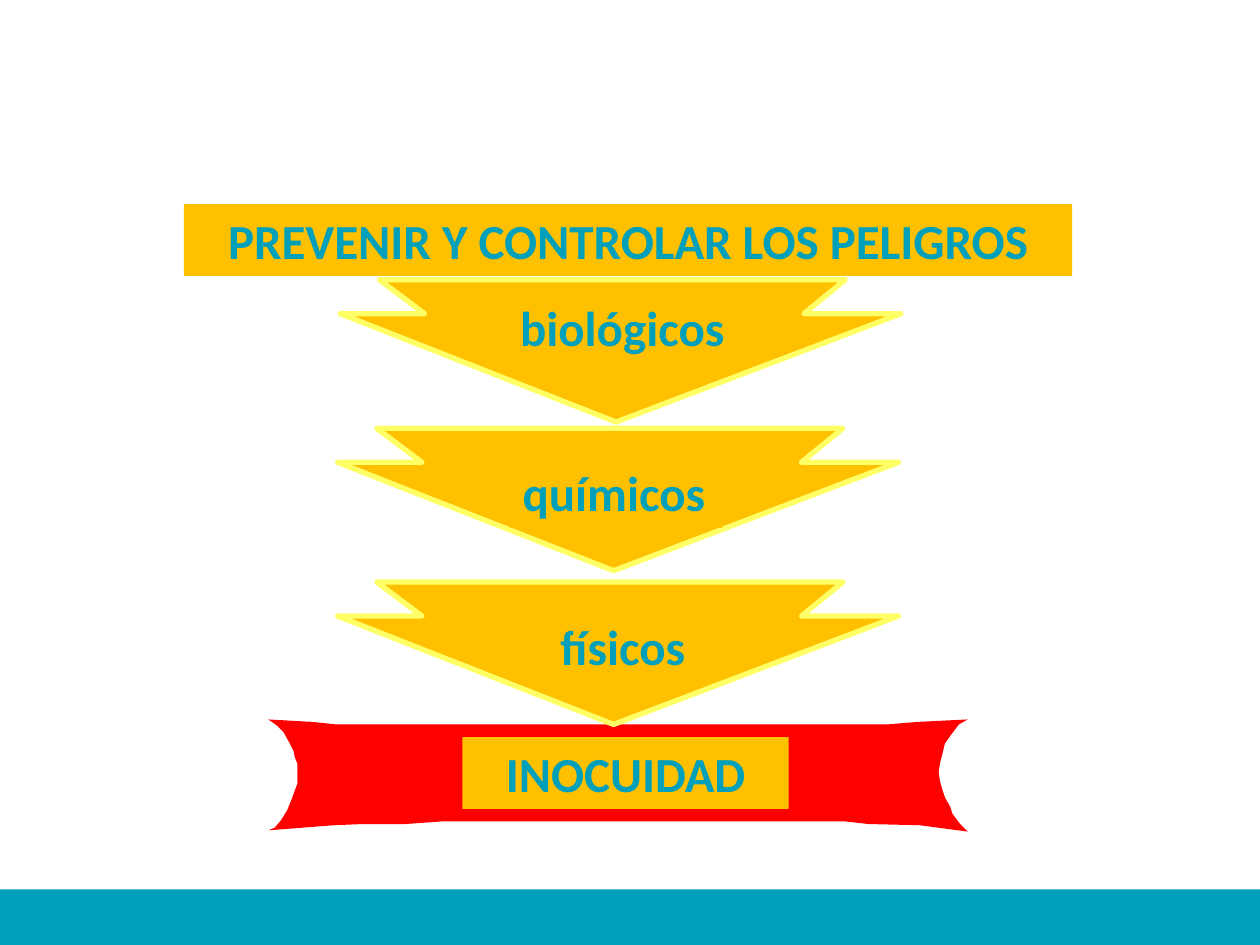
import pptx
import pptx.dml.color
import pptx.enum.shapes
import pptx.enum.text
import pptx.oxml.ns
import pptx.util
from lxml import etree

Inches = pptx.util.Inches
RGBColor = pptx.dml.color.RGBColor
PP_ALIGN = pptx.enum.text.PP_ALIGN
RECTANGLE = pptx.enum.shapes.MSO_SHAPE.RECTANGLE

TEAL = RGBColor(0x00, 0xA0, 0xBA)
GOLD = RGBColor(0xFF, 0xC0, 0x00)
YELLOW = RGBColor(0xFF, 0xFF, 0x66)
RED = RGBColor(0xFF, 0x00, 0x00)

ARROW = [(2.19, 1.13), (0, 0.27), (0.67, 0.27), (0.31, 0), (4.01, 0),
         (3.68, 0.27), (4.45, 0.27)]

RIBBON = [
    (0, 0), (0.35, 0.02), (0.54, 0.04), (4.91, 0.04), (5.15, 0.02), (5.55, 0),
    (5.48, 0.04), (5.42, 0.12), (5.37, 0.19), (5.35, 0.27), (5.33, 0.35),
    (5.32, 0.42), (5.33, 0.49), (5.35, 0.56), (5.37, 0.62), (5.41, 0.69),
    (5.43, 0.75), (5.49, 0.83), (5.55, 0.89), (5.17, 0.84), (4.76, 0.83),
    (4.58, 0.81), (1.37, 0.81), (1.09, 0.83), (0.75, 0.83), (0.52, 0.84),
    (0.26, 0.86), (0, 0.88), (0.05, 0.86), (0.1, 0.8), (0.15, 0.72),
    (0.19, 0.62), (0.23, 0.51), (0.23, 0.35), (0.21, 0.3), (0.2, 0.25),
    (0.17, 0.19), (0.12, 0.1), (0.07, 0.05),
]


def paint(sp, fill, line=None):
    sp.shadow.inherit = False
    sp.fill.solid()
    sp.fill.fore_color.rgb = fill
    if line is None:
        sp.line.fill.background()
        return
    sp.line.color.rgb = line
    sp.line.width = pptx.util.Pt(3)
    etree.SubElement(sp.line._get_or_add_ln(), pptx.oxml.ns.qn("a:round"))


def write_text(sp, text, size=28, color=TEAL, align=PP_ALIGN.CENTER, wrap=True):
    tf = sp.text_frame
    tf.word_wrap = wrap
    tf.auto_size = pptx.enum.text.MSO_AUTO_SIZE.NONE
    tf.vertical_anchor = pptx.enum.text.MSO_ANCHOR.MIDDLE
    p = tf.paragraphs[0]
    p.alignment = align
    r = p.add_run()
    r.text = text
    r.font.name = "Calibri"
    r.font.size = pptx.util.Pt(size)
    r.font.bold = True
    r.font.color.rgb = color


def add_box(s, left, top, width, height, fill):
    sp = s.shapes.add_shape(RECTANGLE, Inches(left), Inches(top),
                            Inches(width), Inches(height))
    paint(sp, fill)
    return sp


def add_outline(s, left, top, points, fill, line=None):
    spots = [(Inches(left + x), Inches(top + y)) for x, y in points]
    builder = s.shapes.build_freeform(*spots[0])
    builder.add_line_segments(spots[1:], close=True)
    paint(builder.convert_to_shape(), fill, line)


def add_heading(s, left, top, width, height, text):
    sp = s.shapes.title
    sp.left, sp.top = Inches(left), Inches(top)
    sp.width, sp.height = Inches(width), Inches(height)
    sp.fill.solid()
    sp.fill.fore_color.rgb = GOLD
    write_text(sp, text)


def add_hazard(s, left, top, text, dx, dy, width):
    add_outline(s, left, top, ARROW, GOLD, YELLOW)
    label = add_box(s, left + dx, top + dy, width, 0.57, GOLD)
    write_text(label, text, align=PP_ALIGN.LEFT, wrap=False)


def add_ribbon(s, left, top, text):
    add_outline(s, left, top, RIBBON, RED)
    write_text(add_box(s, left + 1.54, top + 0.14, 2.59, 0.57, GOLD), text)


def main():
    prs = pptx.Presentation()
    prs.slide_width, prs.slide_height = Inches(10), Inches(7.5)
    s = prs.slides.add_slide(prs.slide_layouts[5])
    add_box(s, 0, 7.06, 10, 0.44, TEAL)
    add_heading(s, 1.46, 1.62, 7.05, 0.57, "PREVENIR Y CONTROLAR LOS PELIGROS")
    add_ribbon(s, 2.13, 5.71, "INOCUIDAD")
    hazards = [
        (2.7, 2.22, "biológicos", 1.33, 0.09, 1.84),
        (2.68, 3.4, "químicos", 1.37, 0.22, 1.68),
        (2.68, 4.62, "físicos", 1.67, 0.22, 1.2),
    ]
    for left, top, text, dx, dy, width in hazards:
        add_hazard(s, left, top, text, dx, dy, width)
    prs.save("out.pptx")


if __name__ == "__main__":
    main()
